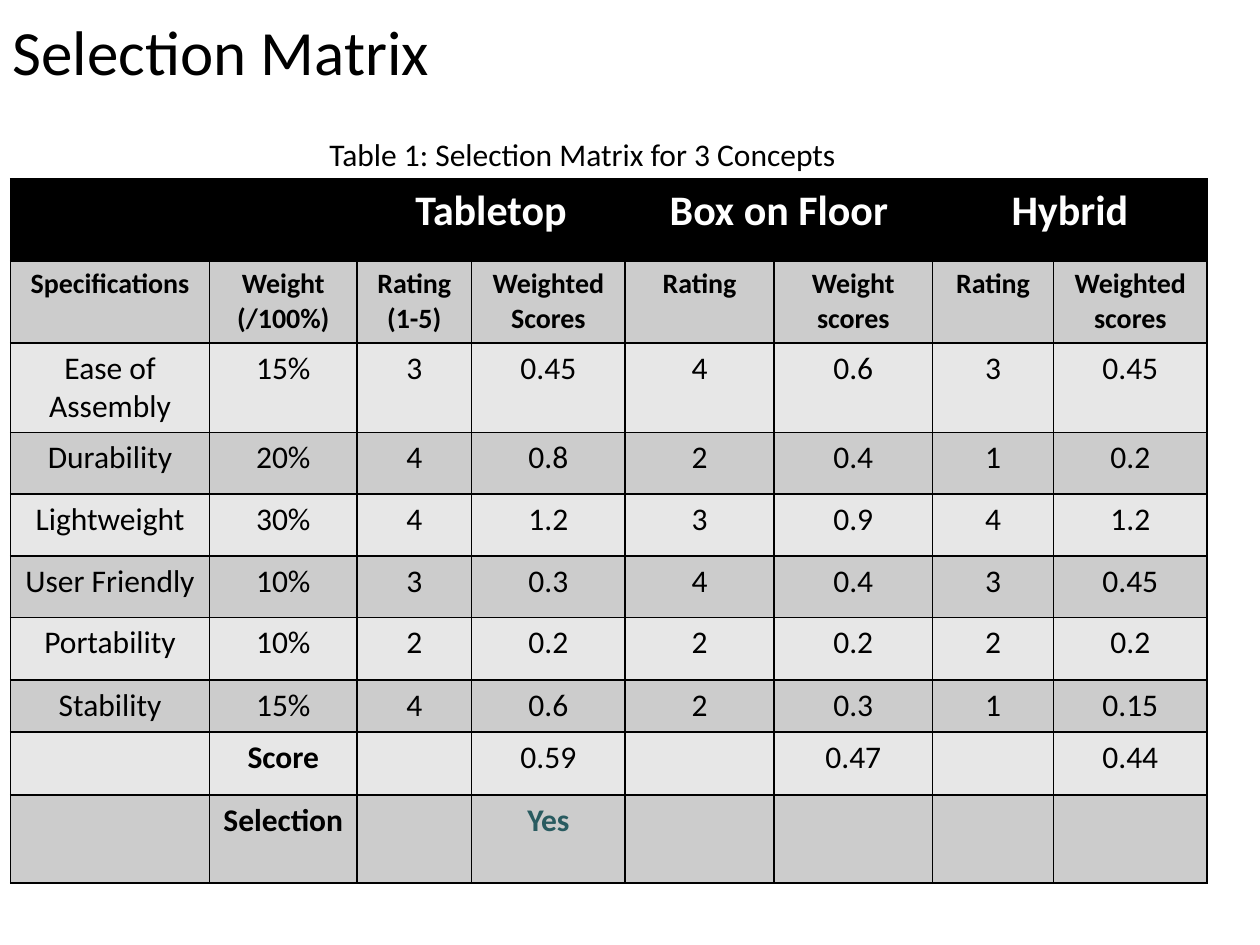
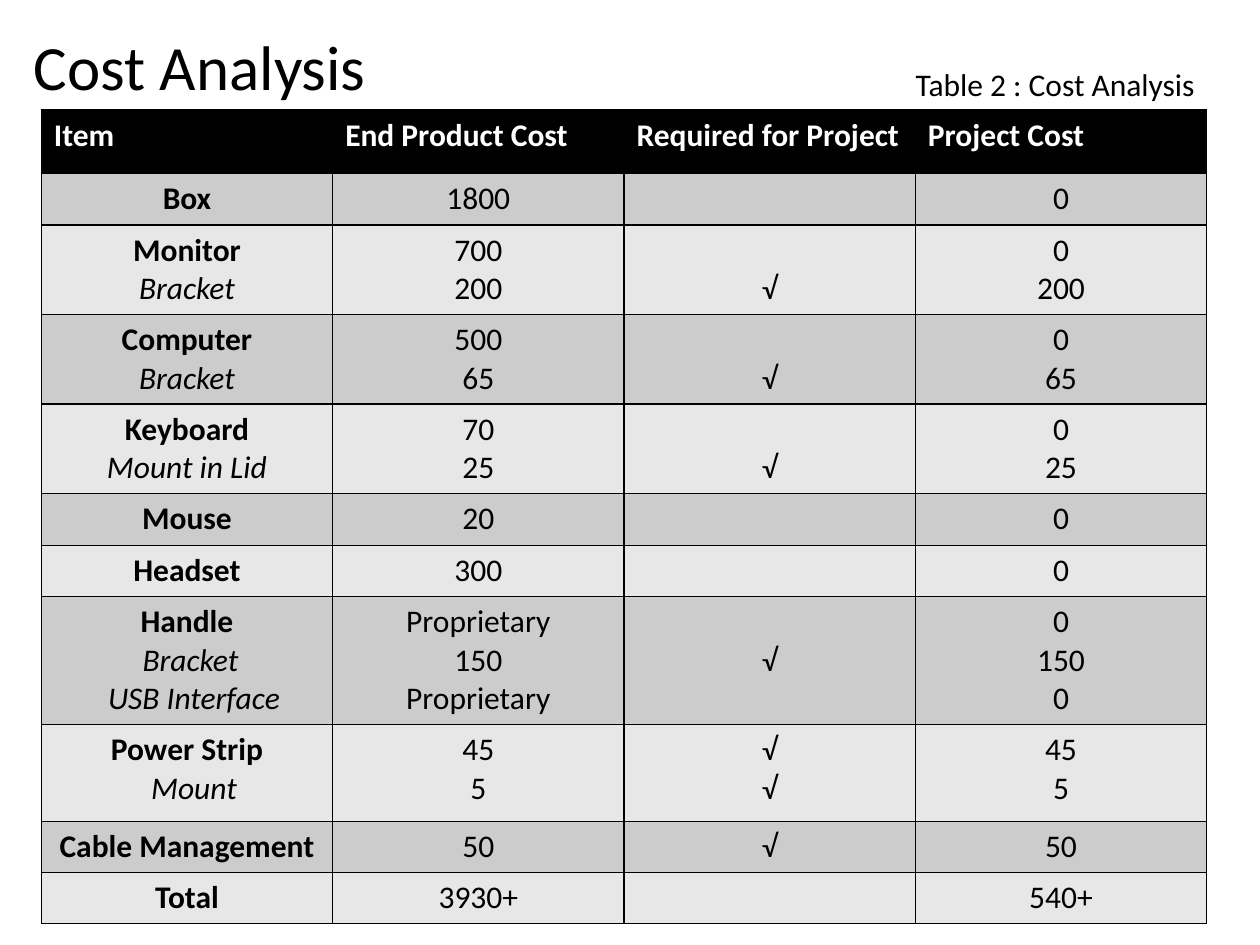
import pptx
import pptx.util
import pptx.dml.color
import pptx.enum.text
import pptx.oxml.ns
import lxml.etree

Pt = pptx.util.Pt
RGBColor = pptx.dml.color.RGBColor
ALIGN = pptx.enum.text.PP_ALIGN
ANCHOR = pptx.enum.text.MSO_ANCHOR

BLACK = RGBColor(0x00, 0x00, 0x00)
WHITE = RGBColor(0xFF, 0xFF, 0xFF)
DARK_BAND = RGBColor(0xCC, 0xCC, 0xCC)
LIGHT_BAND = RGBColor(0xE7, 0xE7, 0xE7)
TEAL = RGBColor(0x29, 0x5B, 0x60)
FONT = "Calibri"


def write_lines(tf, lines, align=ALIGN.CENTER, color=BLACK, **fmt):
    for i, line in enumerate(lines):
        p = tf.paragraphs[0] if i == 0 else tf.add_paragraph()
        p.alignment = align
        r = p.add_run()
        r.text = line
        r.font.color.rgb = color
        values = {"name": FONT, "size": Pt(18), "bold": False, "italic": False}
        for key, value in {**values, **fmt}.items():
            setattr(r.font, key, value)


def add_table_slide(title, title_box, caption, caption_box, origin, widths, heights):
    s = prs.slides.add_slide(prs.slide_layouts[5])
    sp = s.shapes.title
    sp.left, sp.top, sp.width, sp.height = [Pt(v) for v in title_box]
    cap = s.shapes.add_textbox(*[Pt(v) for v in caption_box])
    for box, text, size in ((sp, title, 36), (cap, caption, 18)):
        tf = box.text_frame
        settings = {"word_wrap": True, "vertical_anchor": ANCHOR.TOP,
                    "auto_size": pptx.enum.text.MSO_AUTO_SIZE.NONE}
        for key, value in settings.items():
            setattr(tf, key, value)
        write_lines(tf, [text], ALIGN.LEFT, size=Pt(size))

    frame = s.shapes.add_table(len(heights), len(widths), Pt(origin[0]), Pt(origin[1]),
                               Pt(sum(widths)), Pt(sum(heights)))
    table = frame.table
    for column, width in zip(table.columns, widths):
        column.width = Pt(width)
    for i, (row, height) in enumerate(zip(table.rows, heights)):
        row.height = Pt(height)
        for cell in row.cells:
            tcPr = cell._tc.get_or_add_tcPr()
            for side in ("a:lnL", "a:lnR", "a:lnT", "a:lnB"):
                ln = lxml.etree.SubElement(tcPr, pptx.oxml.ns.qn(side), w=str(Pt(1)))
                fill = lxml.etree.SubElement(ln, pptx.oxml.ns.qn("a:solidFill"))
                lxml.etree.SubElement(fill, pptx.oxml.ns.qn("a:srgbClr"), val=str(BLACK))
            cell.fill.solid()
            band = DARK_BAND if i % 2 else LIGHT_BAND
            cell.fill.fore_color.rgb = BLACK if i == 0 else band
    return table


prs = pptx.Presentation()
prs.slide_width, prs.slide_height = Pt(720), Pt(540)

matrix = add_table_slide(
    "Selection Matrix", (0, 3.6, 570, 51),
    "Table 1: Selection Matrix for 3 Concepts", (181.2, 73.4, 366, 29),
    (6, 102.3), [113.8, 84.2, 65.5, 87.8, 85, 90.7, 69.1, 87.8],
    [46.8, 46.8, 50.4, 35.3, 35.3, 35.3, 35.7, 29.7, 36, 50.3])

for k, concept in enumerate(["", "Tabletop", "Box on Floor", "Hybrid"]):
    cell = matrix.cell(0, 2 * k)
    cell.merge(matrix.cell(0, 2 * k + 1))
    if concept:
        write_lines(cell.text_frame, [concept], color=WHITE, size=Pt(24), bold=True)

matrix_rows = [
    ["Specifications", "Weight\n(/100%)", "Rating\n(1-5)", "Weighted Scores",
     "Rating", "Weight scores", "Rating", "Weighted scores"],
    ["Ease of Assembly", "15%", "3", "0.45", "4", "0.6", "3", "0.45"],
    ["Durability", "20%", "4", "0.8", "2", "0.4", "1", "0.2"],
    ["Lightweight", "30%", "4", "1.2", "3", "0.9", "4", "1.2"],
    ["User Friendly", "10%", "3", "0.3", "4", "0.4", "3", "0.45"],
    ["Portability", "10%", "2", "0.2", "2", "0.2", "2", "0.2"],
    ["Stability", "15%", "4", "0.6", "2", "0.3", "1", "0.15"],
    ["", "Score", "", "0.59", "", "0.47", "", "0.44"],
    ["", "Selection", "", "Yes", "", "", "", ""],
]
for i, row in enumerate(matrix_rows, start=1):
    for j, text in enumerate(row):
        if text:
            write_lines(matrix.cell(i, j).text_frame, text.split("\n"),
                        color=TEAL if text == "Yes" else BLACK,
                        size=Pt(16 if i == 1 else 18),
                        bold=i == 1 or text in ("Score", "Selection", "Yes"))

costs = add_table_slide(
    "Cost Analysis", (12.2, 12.2, 300, 51),
    "Table 2 : Cost Analysis", (516.2, 33.8, 203.8, 29),
    (23.6, 62.8), [166.5] * 4,
    [36, 29.7, 50.9, 50.3, 50.3, 29.7, 29.2, 72, 55.4, 28.7, 29.2])

for j, heading in enumerate(["Item", "End Product Cost", "Required for Project", "Project Cost"]):
    write_lines(costs.cell(0, j).text_frame, [heading], ALIGN.LEFT, WHITE, bold=True)

cost_rows = [
    ["Box", "1800", "", "0"],
    ["Monitor\nBracket", "700\n200", "√", "0\n200"],
    ["Computer\nBracket", "500\n65", "√", "0\n65"],
    ["Keyboard\nMount in Lid", "70\n25", "√", "0\n25"],
    ["Mouse", "20", "", "0"],
    ["Headset", "300", "", "0"],
    ["Handle\nBracket\nUSB Interface", "Proprietary\n150\nProprietary", "√", "0\n150\n0"],
    ["Power Strip\nMount", "45\n5", "√\n√", "45\n5"],
    ["Cable Management", "50", "√", "50"],
    ["Total", "3930+", "", "540+"],
]
for i, row in enumerate(cost_rows, start=1):
    for j, text in enumerate(row):
        if text:
            write_lines(costs.cell(i, j).text_frame, text.split("\n"))
    for k, p in enumerate(costs.cell(i, 0).text_frame.paragraphs):
        p.runs[0].font.bold = k == 0
        p.runs[0].font.italic = k > 0
    if row[2] == "√":
        line_count = len(row[0].split("\n"))
        anchors = {1: ANCHOR.TOP, 2: ANCHOR.BOTTOM, 3: ANCHOR.MIDDLE}
        costs.cell(i, 2).vertical_anchor = anchors[line_count]

for i, k, indent in ((7, 1, 4), (7, 2, 8), (8, 1, 8)):
    p = costs.cell(i, 0).text_frame.paragraphs[k]
    p._p.get_or_add_pPr().set("marL", str(Pt(indent)))

prs.save("out.pptx")
